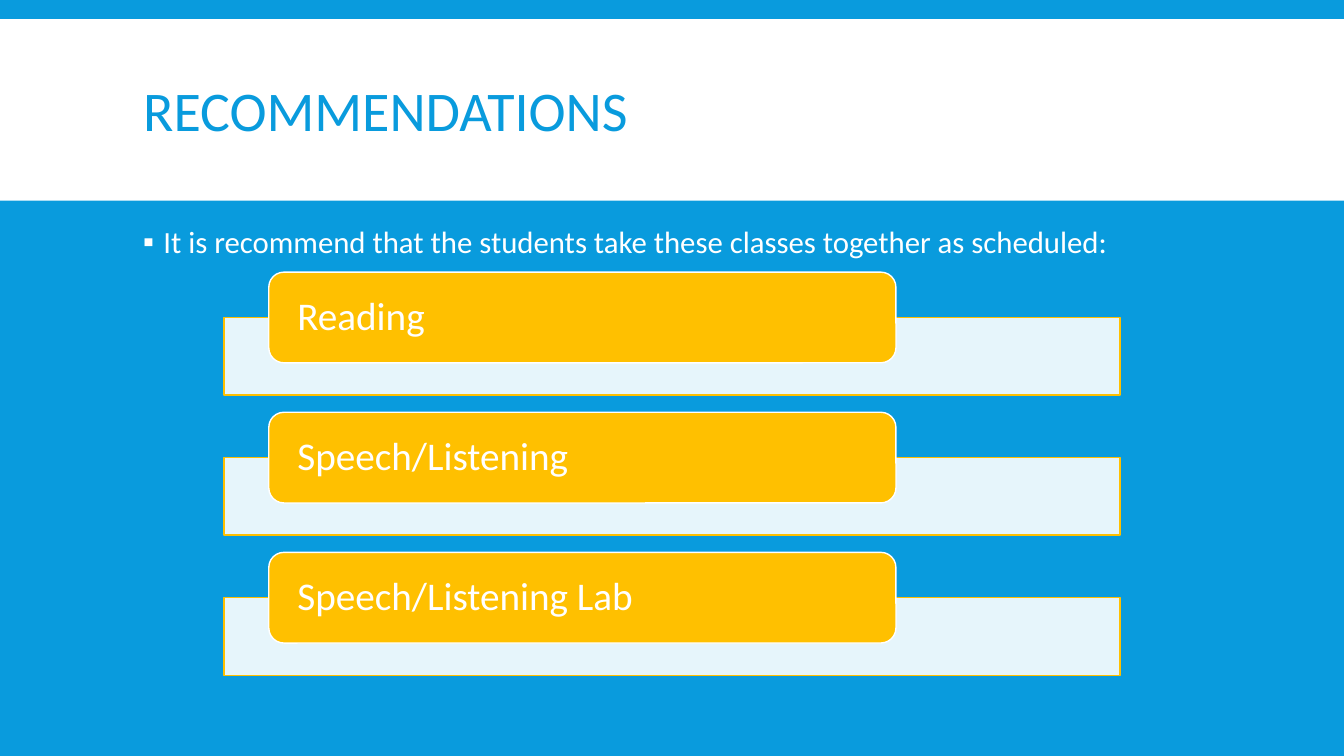
from lxml import etree
from pptx import Presentation
from pptx import util as u
from pptx.dml.color import RGBColor
from pptx.enum import shapes, text
from pptx.oxml import ns

BLUE = RGBColor(0x09, 0x9B, 0xDD)
WHITE = RGBColor(0xFF, 0xFF, 0xFF)
GOLD = RGBColor(0xFF, 0xC0, 0x00)
FONT = "Calibri"
WIDTH, HEIGHT = 13.33, 7.5
COLUMN = WIDTH / 30
CLASSES = ["Reading", "Speech/Listening", "Speech/Listening Lab"]
FIRST_ROW, ROW_PITCH = 2.7, 1.39


def write_text(shape, content, size, color, anchor=text.MSO_ANCHOR.MIDDLE,
               line_spacing=0.9, before=0, after=0, inset=0.1, inset_y=0.05):
    frame = shape.text_frame
    frame.word_wrap = True
    frame.auto_size = text.MSO_AUTO_SIZE.NONE
    frame.vertical_anchor = anchor
    frame.margin_left = frame.margin_right = u.Inches(inset)
    frame.margin_top = frame.margin_bottom = u.Inches(inset_y)
    paragraph = frame.paragraphs[0]
    paragraph.alignment = text.PP_ALIGN.LEFT
    paragraph.line_spacing = line_spacing
    paragraph.space_before = u.Pt(before)
    paragraph.space_after = u.Pt(after)
    run = paragraph.add_run()
    run.text = content
    run.font.name = FONT
    run.font.size = u.Pt(size)
    run.font.color.rgb = color
    return paragraph


def add_box(slide, kind, left, top, width, height, fill, line=None, opacity=100):
    shape = slide.shapes.add_shape(kind, *map(u.Inches, (left, top, width, height)))
    shape.shadow.inherit = False
    shape.fill.solid()
    shape.fill.fore_color.rgb = fill
    if opacity < 100:
        color = shape.element.spPr.find(ns.qn("a:solidFill"))[0]
        etree.SubElement(color, ns.qn("a:alpha"), val=str(opacity * 1000))
    if line is None:
        shape.line.fill.background()
    else:
        shape.line.color.rgb = line
        shape.line.width = u.Pt(1)
    return shape


def place(shape, left, top, width, height):
    shape.left, shape.top = u.Inches(left), u.Inches(top)
    shape.width, shape.height = u.Inches(width), u.Inches(height)


def set_bullet(paragraph, character, color, indent):
    properties = paragraph._p.get_or_add_pPr()
    properties.set("marL", str(u.Inches(indent)))
    properties.set("indent", str(-u.Inches(indent)))
    bullet_color = etree.SubElement(properties, ns.qn("a:buClr"))
    etree.SubElement(bullet_color, ns.qn("a:srgbClr"), val=str(color))
    etree.SubElement(properties, ns.qn("a:buFont"), typeface=FONT)
    etree.SubElement(properties, ns.qn("a:buChar"), char=character)


def add_header(slide):
    title = slide.shapes.title
    place(title, 1.32, 0.31, 10.7, 1.65)
    write_text(title, "RECOMMENDATIONS", 40, BLUE, line_spacing=0.85)
    band = add_box(slide, shapes.MSO_SHAPE.RECTANGLE, 0, 0.19, WIDTH, 1.8, WHITE)
    title.element.addprevious(band.element)


def add_introduction(slide):
    body = slide.placeholders[1]
    place(body, 1.32, 2.2, 10.7, 4.6)
    paragraph = write_text(
        body, "It is recommend that the students take these classes together as scheduled:",
        22, WHITE, anchor=text.MSO_ANCHOR.TOP, before=12, after=2)
    set_bullet(paragraph, "▪", WHITE, 0.2)


def add_class(slide, name, top):
    add_box(slide, shapes.MSO_SHAPE.RECTANGLE, 5 * COLUMN, top + 0.45,
            20 * COLUMN, 0.77, WHITE, GOLD, opacity=90)
    label = add_box(slide, shapes.MSO_SHAPE.ROUNDED_RECTANGLE, 6 * COLUMN, top,
                    14 * COLUMN, 0.9, GOLD, WHITE)
    write_text(label, name, 28, WHITE, inset=0.24, inset_y=0)


def main():
    presentation = Presentation()
    presentation.slide_width = u.Inches(WIDTH)
    presentation.slide_height = u.Inches(HEIGHT)
    slide = presentation.slides.add_slide(presentation.slide_layouts[1])
    slide.background.fill.solid()
    slide.background.fill.fore_color.rgb = BLUE
    add_header(slide)
    add_introduction(slide)
    for row, name in enumerate(CLASSES):
        add_class(slide, name, FIRST_ROW + row * ROW_PITCH)
    presentation.save("out.pptx")


if __name__ == "__main__":
    main()
